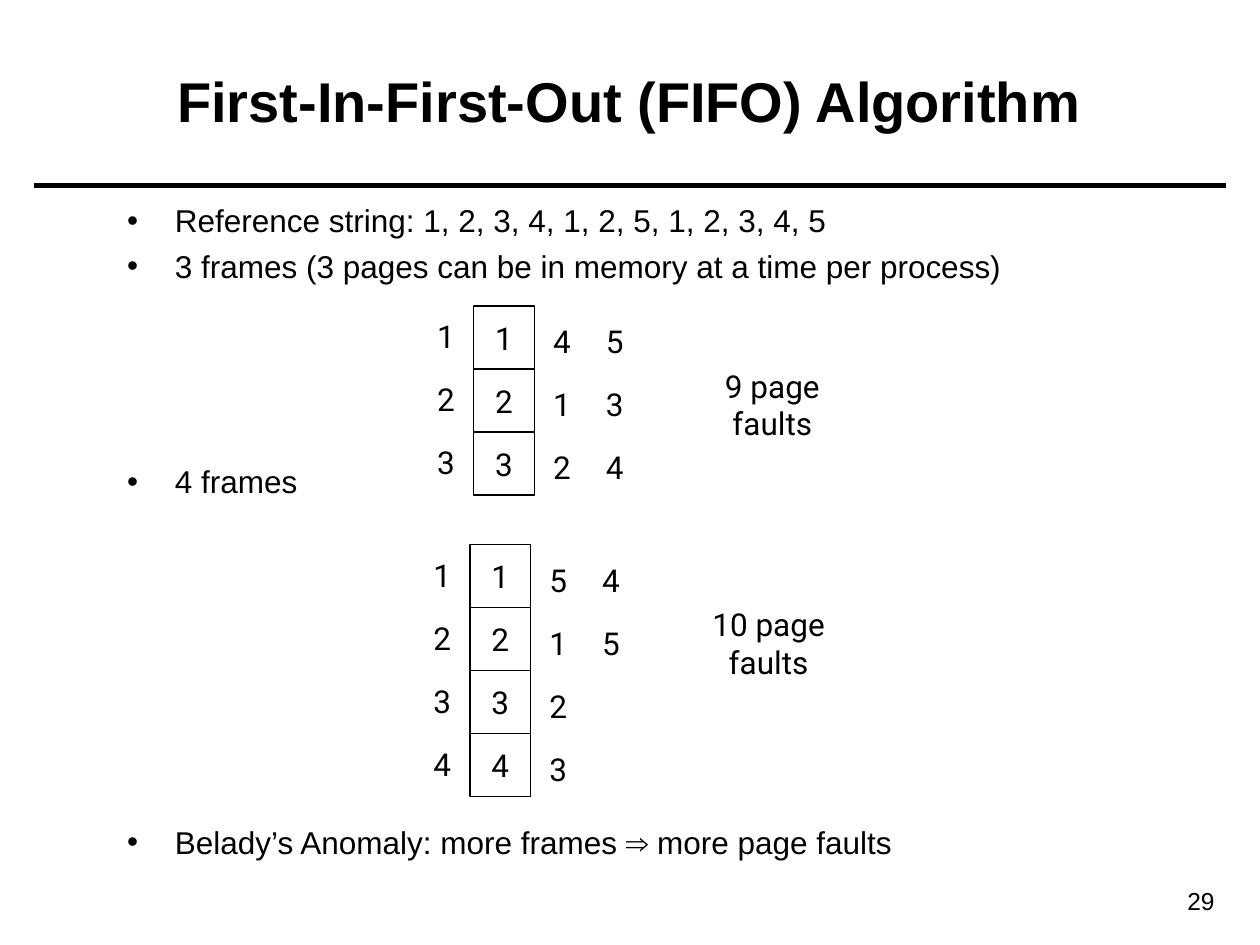
"""Build the FIFO page replacement slide with its two frame diagrams."""
from lxml import etree
from pptx import Presentation
from pptx.dml.color import RGBColor
from pptx.enum.shapes import MSO_CONNECTOR as Link, MSO_SHAPE as Form
from pptx.enum.text import MSO_ANCHOR as Anchor, PP_ALIGN as Align
from pptx.oxml.ns import qn
from pptx.util import Inches, Pt

BLACK = RGBColor(0, 0, 0)
WHITE = RGBColor(255, 255, 255)

TITLE = "First-In-First-Out (FIFO) Algorithm"
NUMBER = "29"
BULLETS = [
    ("Reference string: 1, 2, 3, 4, 1, 2, 5, 1, 2, 3, 4, 5", 0),
    ("3 frames (3 pages can be in memory at a time per process)", 4.3),
    ("4 frames", 101.6),
    ("Belady’s Anomaly: more frames ⇒ more page faults", 184.4),
]
FRAMES = [
    {"left": 3.76, "top": 2.43, "note": "9 page faults", "mid": 6.13,
     "rows": ["1145", "2213", "3324"]},
    {"left": 3.73, "top": 4.32, "note": "10 page faults", "mid": 6.1,
     "rows": ["1154", "2215", "332", "443"]},
]
CELL_W, CELL_H = 0.48, 0.5
TEXT_W, TEXT_H = 0.34, 0.4
NOTE_W, NOTE_H = 1.1, 0.7
SHIFTS = [(-0.39, 0.04), (0, 0), (0.53, 0.08), (0.95, 0.08)]
INDENT = Inches(0.38)


def style(para, size, face="Arial", align=Align.LEFT, bold=False):
    para.alignment = align
    font = para.font
    font.size, font.name, font.bold = Pt(size), face, bold
    font.color.rgb = BLACK


def fill_text(shape, text, size, face="Roboto", align=Align.CENTER, wrap=False):
    frame = shape.text_frame
    frame.text = text
    frame.word_wrap = wrap
    frame.vertical_anchor = Anchor.MIDDLE
    frame.margin_left = frame.margin_right = 0
    frame.margin_top = frame.margin_bottom = 0
    style(frame.paragraphs[0], size, face, align)


def add_box(slide, left, top, width, height):
    return slide.shapes.add_textbox(*map(Inches, (left, top, width, height)))


def add_title(slide):
    title = slide.shapes.title
    title.left, title.top = Inches(0.35), Inches(0.17)
    title.width, title.height = Inches(9.29), Inches(1.25)
    title.text_frame.text = TITLE
    title.text_frame.vertical_anchor = Anchor.MIDDLE
    style(title.text_frame.paragraphs[0], 32, align=Align.CENTER, bold=True)


def add_rule(slide):
    ends = map(Inches, (0.27, 1.47, 9.73, 1.47))
    rule = slide.shapes.add_connector(Link.STRAIGHT, *ends)
    rule.line.color.rgb = BLACK
    rule.line.width = Pt(3)
    etree.SubElement(rule.element.spPr, qn("a:effectLst"))


def add_bullets(slide):
    frame = add_box(slide, 0.91, 1.55, 8.89, 5.4).text_frame
    frame.word_wrap = True
    for i, (text, gap) in enumerate(BULLETS):
        para = frame.add_paragraph() if i else frame.paragraphs[0]
        para.text = text
        para.space_before = Pt(gap)
        style(para, 18)
        props = para._p.get_or_add_pPr()
        props.set("marL", str(INDENT))
        props.set("indent", str(-INDENT))
        etree.SubElement(props, qn("a:buFont")).set("typeface", "Arial")
        etree.SubElement(props, qn("a:buChar")).set("char", "•")
        props.append(props.find(qn("a:defRPr")))


def add_cell(slide, left, top):
    place = map(Inches, (left, top, CELL_W, CELL_H))
    cell = slide.shapes.add_shape(Form.RECTANGLE, *place)
    cell.shadow.inherit = False
    cell.fill.solid()
    cell.fill.fore_color.rgb = WHITE
    cell.line.color.rgb = BLACK
    cell.line.width = Pt(0.75)
    return cell


def add_frames(slide, left, top, note, mid, rows):
    for r, row in enumerate(rows):
        for c, (page, (dx, dy)) in enumerate(zip(row, SHIFTS)):
            x, y = left + dx, top + r * CELL_H + dy
            if c == 1:
                shape = add_cell(slide, x, y)
            else:
                shape = add_box(slide, x, y, TEXT_W, TEXT_H)
            fill_text(shape, page, 18)
    box = add_box(slide, mid - NOTE_W / 2, top + 0.43, NOTE_W, NOTE_H)
    fill_text(box, note, 18, wrap=True)


def main():
    deck = Presentation()
    deck.slide_width, deck.slide_height = Inches(10), Inches(7.5)
    slide = deck.slides.add_slide(deck.slide_layouts[5])
    add_title(slide)
    add_rule(slide)
    add_bullets(slide)
    for group in FRAMES:
        add_frames(slide, **group)
    fill_text(add_box(slide, 8.6, 6.98, 1.04, 0.34), NUMBER, 14, "Arial", Align.RIGHT)
    deck.save("out.pptx")


if __name__ == "__main__":
    main()
